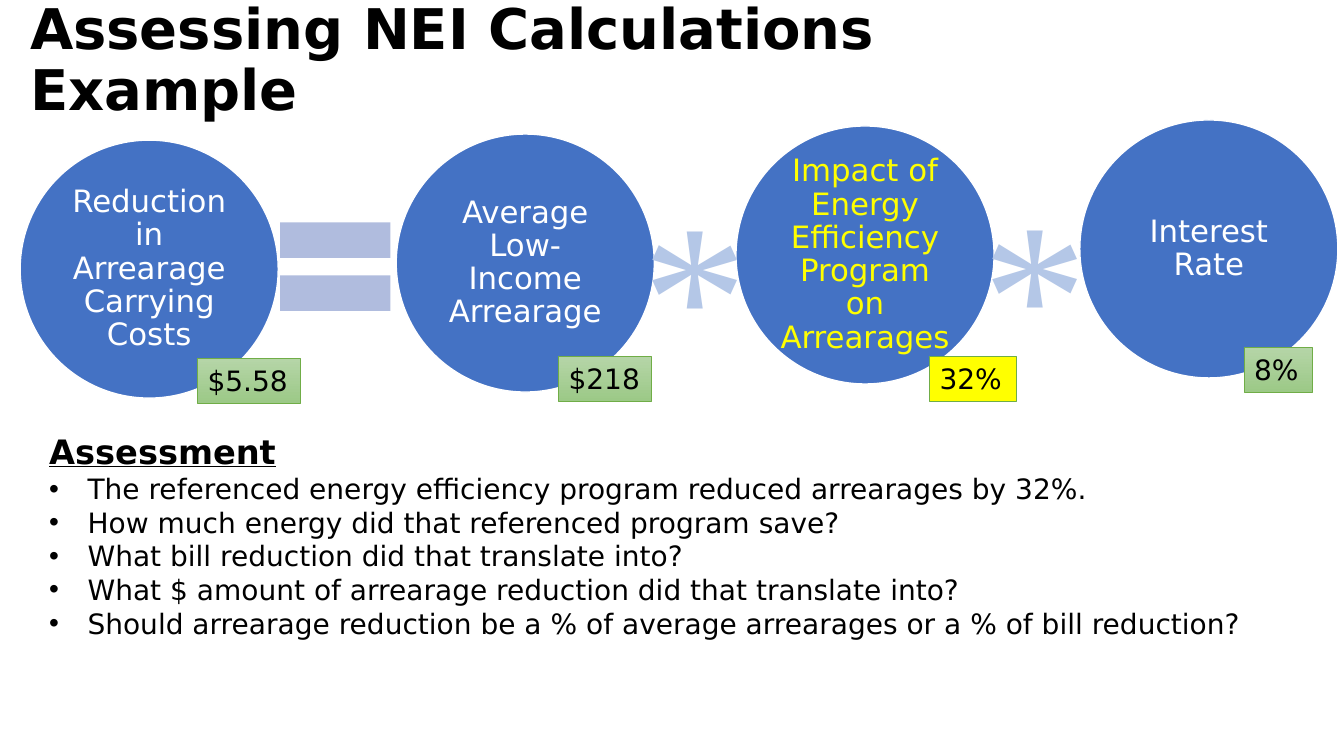
import pptx
import pptx.util
import pptx.dml.color
import pptx.enum.shapes
import pptx.enum.text
import pptx.oxml.ns
import lxml.etree

RGB = pptx.dml.color.RGBColor
BLACK = RGB(0x00, 0x00, 0x00)
WHITE = RGB(0xFF, 0xFF, 0xFF)
BLUE = RGB(0x44, 0x72, 0xC4)
PALE = RGB(0xB4, 0xC7, 0xE7)
LILAC = RGB(0xB0, 0xBC, 0xDE)
YELLOW = RGB(0xFF, 0xFF, 0x00)
GREEN = RGB(0x70, 0xAD, 0x47)
LIGHT = RGB(0xB5, 0xD5, 0xA7)
DEEP = RGB(0x9C, 0xC9, 0x87)

SHAPE = pptx.enum.shapes.MSO_SHAPE
ALIGN = pptx.enum.text.PP_ALIGN
ANCHOR = pptx.enum.text.MSO_ANCHOR
FIT = pptx.enum.text.MSO_AUTO_SIZE
SANS = "DejaVu Sans"
SERIF = "Times New Roman"
SCALE = 9144


def px(n):
    return pptx.util.Emu(n * SCALE)


class Board:
    def __init__(self, deck):
        self.shapes = deck.slides.add_slide(deck.slide_layouts[6]).shapes

    def style(self, para, size, color=BLACK, face=SANS, bold=False):
        font = para.font
        font.name, font.size, font.bold = face, pptx.util.Pt(size), bold
        font.color.rgb = color

    def text(self, left, top, width, height):
        frame = self.shapes.add_textbox(*map(px, (left, top, width, height))).text_frame
        frame.word_wrap = False
        frame.auto_size = FIT.SHAPE_TO_FIT_TEXT
        return frame

    def shape(self, kind, left, top, width, height, fill, line=None, weight=1):
        shape = self.shapes.add_shape(kind, *map(px, (left, top, width, height)))
        shape.shadow.inherit = False
        if fill is None:
            shape.fill.gradient()
            shape.fill.gradient_angle = 270
            for stop, color in zip(shape.fill.gradient_stops, (LIGHT, DEEP)):
                stop.color.rgb = color
        else:
            shape.fill.solid()
            shape.fill.fore_color.rgb = fill
        if line is None:
            shape.line.fill.background()
        else:
            shape.line.color.rgb = line
            shape.line.width = pptx.util.Pt(weight)
        return shape

    def title(self, words):
        frame = self.text(20, -11, 1150, 145)
        frame.word_wrap = True
        frame.auto_size = FIT.NONE
        frame.vertical_anchor = ANCHOR.MIDDLE
        para = frame.paragraphs[0]
        para.text = words
        para.line_spacing = 0.9
        self.style(para, 40, bold=True)

    def circle(self, left, top, words, color=WHITE):
        frame = self.shape(SHAPE.OVAL, left, top, 256, 256, BLUE, WHITE).text_frame
        frame.word_wrap = True
        frame.vertical_anchor = ANCHOR.MIDDLE
        frame.margin_left = frame.margin_right = px(4)
        frame.margin_top = frame.margin_bottom = px(4)
        para = frame.paragraphs[0]
        para.text = words
        para.alignment = ALIGN.CENTER
        para.line_spacing = 0.9
        self.style(para, 22, color)

    def star(self, left, top):
        para = self.text(left, top, 125, 263).paragraphs[0]
        para.text = "*"
        self.style(para, 150, PALE, SERIF)

    def tag(self, left, top, width, words, fill=None):
        frame = self.shape(SHAPE.RECTANGLE, left, top, width, 44, fill, GREEN, 0.5).text_frame
        frame.word_wrap = False
        frame.auto_size = FIT.SHAPE_TO_FIT_TEXT
        frame.vertical_anchor = ANCHOR.TOP
        para = frame.paragraphs[0]
        para.text = words
        para.alignment = ALIGN.LEFT
        self.style(para, 20)

    def bullet(self, para):
        props = para._p.get_or_add_pPr()
        props.set("marL", str(px(38)))
        props.set("indent", str(px(-38)))
        qn = pptx.oxml.ns.qn
        lxml.etree.SubElement(props, qn("a:buFont"), typeface="Arial")
        lxml.etree.SubElement(props, qn("a:buChar"), char="•")

    def notes(self, head, items):
        frame = self.text(39, 423, 1217, 289)
        para = frame.paragraphs[0]
        para.text = head
        self.style(para, 24, bold=True)
        para.font.underline = True
        for item in items:
            para = frame.add_paragraph()
            para.text = item
            self.bullet(para)
            self.style(para, 20)


def main():
    deck = pptx.Presentation()
    deck.slide_width, deck.slide_height = px(1333), px(750)
    board = Board(deck)
    board.title("Assessing NEI Calculations\nExample")
    board.circle(20, 139, "Reduction in Arrearage Carrying Costs")
    board.circle(393, 133, "Average Low-Income Arrearage")
    board.circle(730, 125, "Impact of Energy Efficiency Program on Arrearages", YELLOW)
    board.shape(SHAPE.MATH_EQUAL, 258, 190, 149, 149, LILAC)
    board.star(627, 153)
    board.star(965, 152)
    board.circle(1071, 119, "Interest Rate")
    board.notes("Assessment", (
        "The referenced energy efficiency program reduced arrearages by 32%.",
        "How much energy did that referenced program save?",
        "What bill reduction did that translate into?",
        "What $ amount of arrearage reduction did that translate into?",
        "Should arrearage reduction be a % of average arrearages or a % of bill reduction?",
    ))
    board.tag(196, 356, 102, "$5.58")
    board.tag(554, 354, 92, "$218")
    board.tag(922, 354, 86, "32%", YELLOW)
    board.tag(1234, 345, 68, "8%")
    deck.save("out.pptx")


if __name__ == "__main__":
    main()
